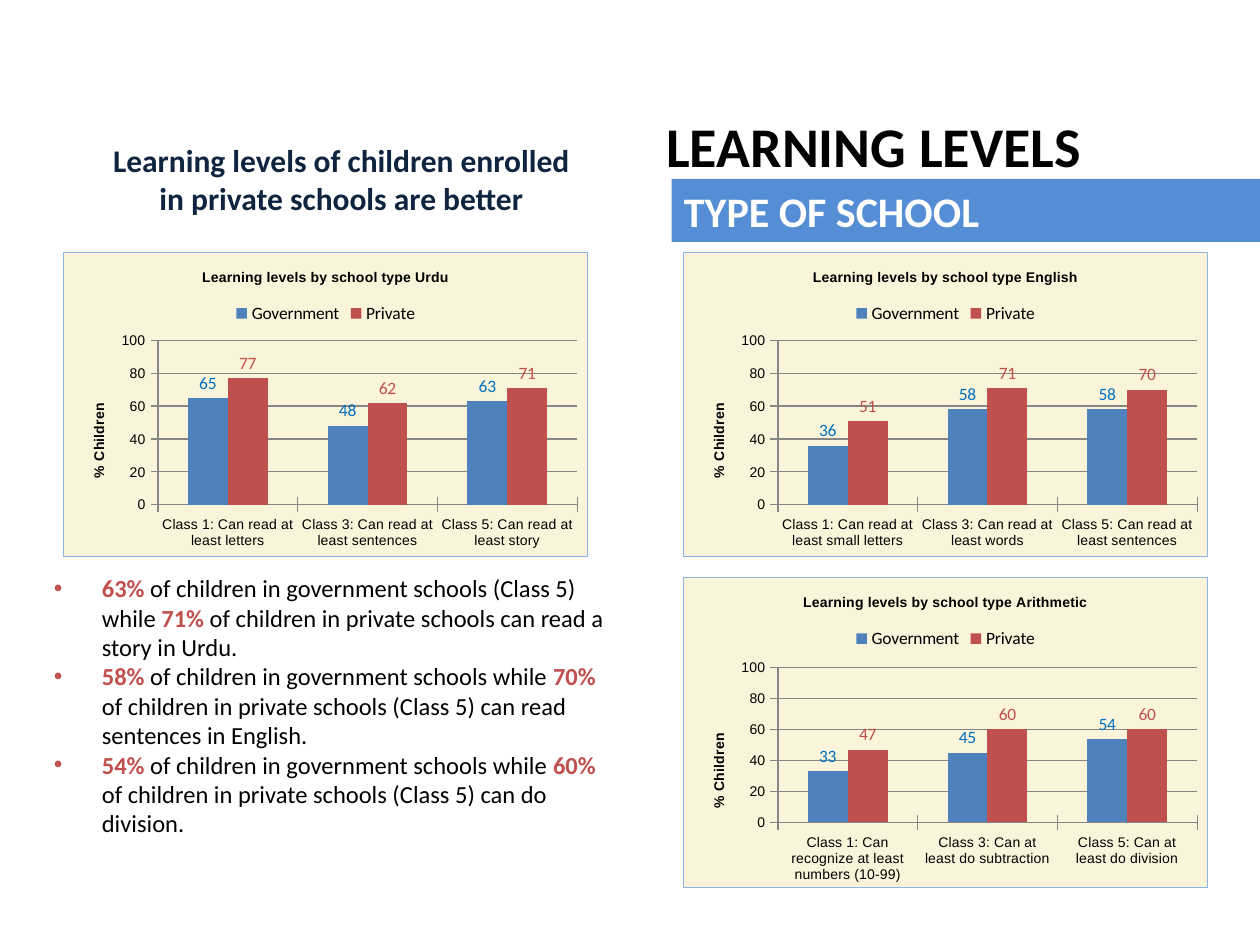
from dataclasses import dataclass

from lxml import etree
from pptx import Presentation
from pptx.chart.data import CategoryChartData
from pptx.dml.color import RGBColor
from pptx.enum import chart as ch, shapes, text
from pptx.oxml import parse_xml
from pptx.oxml.ns import nsdecls, qn
from pptx.util import Inches, Pt


@dataclass(frozen=True)
class Theme:
    body: str = "Calibri"
    axis: str = "Arial"
    ink: str = "000000"
    white: str = "FFFFFF"
    navy: str = "0F243E"
    band: str = "558ED5"
    cream: str = "FAF4DA"
    edge: str = "8EB4E3"
    grid: str = "868686"
    bars: tuple = ("4F81BD", "C0504D")
    marks: tuple = ("0070C0", "C0504D")
    head: int = 32
    sub: int = 24
    lead: int = 18
    text: int = 14
    label: int = 10
    small: int = 8


class Deck:
    def __init__(self, theme):
        self.theme = theme
        self.prs = Presentation()
        self.prs.slide_width, self.prs.slide_height = Inches(10), Inches(7.5)
        self.slide = self.prs.slides.add_slide(self.prs.slide_layouts[6])

    def style(self, font, size, color, bold=False, name=None):
        font.name, font.size, font.bold = name or self.theme.body, Pt(size), bold
        font.color.rgb = RGBColor.from_string(color)

    def letter(self, shape, words, size, color, center=True):
        """Put one bold paragraph in a shape."""
        frame = shape.text_frame
        frame.word_wrap = True
        frame.vertical_anchor = text.MSO_ANCHOR.MIDDLE
        para = frame.paragraphs[0]
        para.text = words
        para.alignment = text.PP_ALIGN.CENTER if center else text.PP_ALIGN.LEFT
        self.style(para.font, size, color, True)

    def label(self, box, words, size, color):
        shape = self.slide.shapes.add_textbox(*map(Inches, box))
        self.letter(shape, words, size, color)

    def panel(self, kind, box, words, size, color, fill=None, center=True):
        shape = self.slide.shapes.add_shape(kind, *map(Inches, box))
        shape.shadow.inherit = False
        shape.line.fill.background()
        if fill:
            shape.fill.solid()
            shape.fill.fore_color.rgb = RGBColor.from_string(fill)
        else:
            shape.fill.background()
        self.letter(shape, words, size, color, center)

    def bullets(self, box, items):
        """Each item alternates highlighted and plain runs."""
        t = self.theme
        frame = self.slide.shapes.add_textbox(*map(Inches, box)).text_frame
        frame.word_wrap = True
        for i, parts in enumerate(items):
            para = frame.add_paragraph() if i else frame.paragraphs[0]
            props = para._p.get_or_add_pPr()
            props.set("marL", str(Inches(0.38)))
            props.set("indent", str(-Inches(0.38)))
            etree.SubElement(props, qn("a:buFont")).set("typeface", t.axis)
            etree.SubElement(props, qn("a:buChar")).set("char", "•")
            para.font.name, para.font.size = t.body, Pt(t.text)
            for j, words in enumerate(parts):
                run = para.add_run()
                run.text = words
                run.font.bold = j % 2 == 0
                color = t.ink if j % 2 else t.marks[1]
                run.font.color.rgb = RGBColor.from_string(color)

    def caption(self, owner, words):
        """Set a chart or axis title."""
        para = owner.text_frame.paragraphs[0]
        para.text = words
        self.style(para.font, self.theme.small, self.theme.ink, True, self.theme.axis)

    def frame(self, chart, top, high):
        """Fill and outline the chart, and fix its plot area."""
        t = self.theme
        chart._chartSpace.find(qn("c:chart")).addnext(parse_xml(
            f'<c:spPr {nsdecls("c", "a")}><a:solidFill><a:srgbClr val="{t.cream}"/></a:solidFill>'
            f'<a:ln w="{Pt(0.75)}"><a:solidFill><a:srgbClr val="{t.edge}"/></a:solidFill></a:ln></c:spPr>'))
        plot = chart._chartSpace.find(".//" + qn("c:plotArea"))
        old = plot.find(qn("c:layout"))
        if old is not None:
            plot.remove(old)
        spots = zip("xywh", (0.18, top, 0.8, high))
        plot.insert(0, parse_xml(
            f'<c:layout {nsdecls("c")}><c:manualLayout><c:layoutTarget val="inner"/>'
            '<c:xMode val="edge"/><c:yMode val="edge"/>'
            + "".join(f'<c:{k} val="{v}"/>' for k, v in spots)
            + '</c:manualLayout></c:layout>'))

    def columns(self, box, topic, cats, series, high):
        t = self.theme
        data = CategoryChartData()
        data.categories = cats
        for name, vals in zip(("Government", "Private"), series):
            data.add_series(name, vals)
        chart = self.slide.shapes.add_chart(
            ch.XL_CHART_TYPE.COLUMN_CLUSTERED, *map(Inches, box), data).chart
        self.style(chart.font, t.label, t.ink)
        chart.has_title = True
        self.caption(chart.chart_title, f"Learning levels by school type {topic}")
        chart.has_legend = True
        chart.legend.position = ch.XL_LEGEND_POSITION.TOP
        chart.legend.include_in_layout = False
        grey = RGBColor.from_string(t.grid)
        for axis in (chart.category_axis, chart.value_axis):
            self.style(axis.tick_labels.font, t.small, t.ink, name=t.axis)
            axis.major_tick_mark = ch.XL_TICK_MARK.CROSS
            axis.format.line.color.rgb = grey
        axis = chart.value_axis
        axis.minimum_scale, axis.maximum_scale, axis.major_unit = 0, 100, 20
        axis.major_gridlines.format.line.color.rgb = grey
        self.caption(axis.axis_title, "% Children")
        plot = chart.plots[0]
        plot.gap_width, plot.overlap, plot.vary_by_categories = 150, 0, False
        for bar, fill, mark in zip(plot.series, t.bars, t.marks):
            bar.format.fill.solid()
            bar.format.fill.fore_color.rgb = RGBColor.from_string(fill)
            tags = bar.data_labels
            tags.show_value = True
            tags.position = ch.XL_LABEL_POSITION.OUTSIDE_END
            self.style(tags.font, t.label, mark)
        self.frame(chart, 0.29, high)


def main():
    t = Theme()
    deck = Deck(t)
    kinds = shapes.MSO_SHAPE
    deck.panel(kinds.RECTANGLE, (5.33, 1.42, 4.67, 0.5), "TYPE OF SCHOOL",
               t.sub, t.white, t.band, center=False)
    deck.label((5.02, 0.68, 3.83, 0.95), "LEARNING LEVELS", t.head, t.ink)
    deck.bullets((0.33, 4.5, 4.69, 2.26), [
        ("63%", " of children in government schools (Class 5) while ",
         "71%", " of children in private schools can read a story in Urdu."),
        ("58% ", "of children in government schools while ",
         "70%", " of children in private schools (Class 5) can read sentences in English."),
        ("54%", " of children in government schools while ",
         "60%", " of children in private schools (Class 5) can do division."),
    ])
    deck.panel(kinds.ROUNDED_RECTANGLE, (0.67, 0.92, 4.08, 1),
               "Learning levels of children enrolled in private schools are better",
               t.lead, t.navy)
    left, right, wide = 0.5, 5.42, 4.17
    deck.columns((left, 2, wide, 2.42), "Urdu",
                 ("Class 1: Can read at least letters",
                  "Class 3: Can read at least sentences",
                  "Class 5: Can read at least story"),
                 ((65, 48, 63), (77, 62, 71)), 0.54)
    deck.columns((right, 2, wide, 2.42), "English",
                 ("Class 1: Can read at least small letters",
                  "Class 3: Can read at least words",
                  "Class 5: Can read at least sentences"),
                 ((36, 58, 58), (51, 71, 70)), 0.54)
    deck.columns((right, 4.58, wide, 2.47), "Arithmetic",
                 ("Class 1: Can recognize at least numbers (10-99)",
                  "Class 3: Can at least do subtraction",
                  "Class 5: Can at least do division"),
                 ((33, 45, 54), (47, 60, 60)), 0.5)
    deck.prs.save("out.pptx")


if __name__ == "__main__":
    main()
